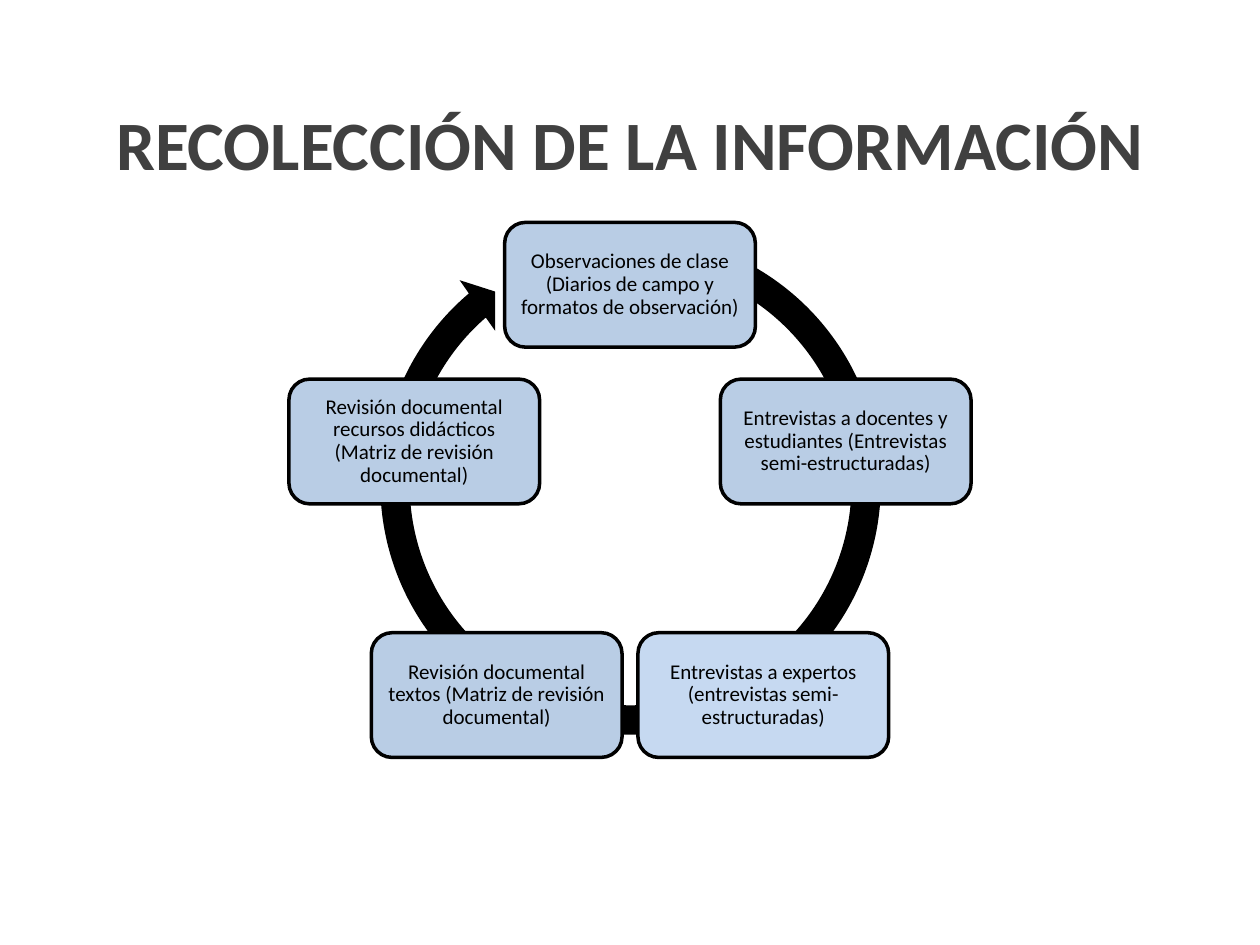
from math import cos, radians, sin

from pptx import Presentation
from pptx.dml.color import RGBColor
from pptx.enum.shapes import MSO_SHAPE
from pptx.enum.text import MSO_ANCHOR, PP_ALIGN
from pptx.util import Inches, Pt

ROUND_RECT = MSO_SHAPE.ROUNDED_RECTANGLE
CIRCULAR_ARROW = MSO_SHAPE.CIRCULAR_ARROW
MIDDLE = MSO_ANCHOR.MIDDLE
CENTER = PP_ALIGN.CENTER

BLACK = RGBColor(0x00, 0x00, 0x00)
DARK_GRAY = RGBColor(0x40, 0x40, 0x40)
BLUE = RGBColor(0xB9, 0xCD, 0xE5)
LIGHT_BLUE = RGBColor(0xC6, 0xD9, 0xF1)

# Cycle layout, in inches
CENTER_X, CENTER_Y, RADIUS = 5.0, 4.06, 1.8
BOX_W, BOX_H = 1.99, 0.99

# Clockwise from the top
STEPS = [
    ("Observaciones de clase (Diarios de campo y formatos de observación)", BLUE),
    ("Entrevistas a docentes y estudiantes (Entrevistas semi-estructuradas)", BLUE),
    ("Entrevistas a expertos (entrevistas semi-estructuradas)", LIGHT_BLUE),
    ("Revisión documental textos (Matriz de revisión documental)", BLUE),
    ("Revisión documental recursos didácticos (Matriz de revisión documental)", BLUE),
]


def write(tf, text, size=12, color=BLACK, bold=False, spacing=1.0, inset=0.05):
    tf.word_wrap = True
    tf.vertical_anchor = MIDDLE
    tf.margin_left = tf.margin_right = Inches(inset)
    tf.margin_top = tf.margin_bottom = Inches(0.05)
    p = tf.paragraphs[0]
    p.alignment = CENTER
    p.line_spacing = spacing
    r = p.add_run()
    r.text = text
    r.font.name = "Calibri"
    r.font.size = Pt(size)
    r.font.bold = bold
    r.font.color.rgb = color


class Deck:
    def __init__(self, prs):
        self.s = prs.slides.add_slide(prs.slide_layouts[6])

    def shape(self, kind, x, y, w, h, fill):
        sp = self.s.shapes.add_shape(kind, Inches(x), Inches(y), Inches(w), Inches(h))
        sp.shadow.inherit = False
        sp.fill.solid()
        sp.fill.fore_color.rgb = fill
        sp.line.fill.background()
        return sp

    def title(self, text, x, y, w, h):
        sp = self.s.shapes.add_textbox(Inches(x), Inches(y), Inches(w), Inches(h))
        write(sp.text_frame, text, size=39.6, color=DARK_GRAY, bold=True, inset=0.1)

    def ring(self, x, y, size):
        sp = self.shape(CIRCULAR_ARROW, x, y, size, size, BLACK)
        # Thickness, head angle, end angle, start angle, head width
        for i, value in enumerate((0.055, 3.307, 137.654, 173.924, 0.058)):
            sp.adjustments[i] = value

    def step(self, text, cx, cy, fill):
        sp = self.shape(ROUND_RECT, cx - BOX_W / 2, cy - BOX_H / 2, BOX_W, BOX_H, fill)
        sp.line.color.rgb = BLACK
        sp.line.width = Pt(2)
        write(sp.text_frame, text, spacing=0.9)


def main():
    prs = Presentation()
    prs.slide_width, prs.slide_height = Inches(10), Inches(7.5)
    deck = Deck(prs)

    # Title
    deck.title("RECOLECCIÓN DE LA INFORMACIÓN", 0.5, 0.51, 9, 1.25)

    # Cycle: arrow behind, steps evenly spaced on a circle
    deck.ring(2.89, 1.73, 4.23)
    for i, (text, fill) in enumerate(STEPS):
        angle = radians(i * 360 / len(STEPS))
        deck.step(text, CENTER_X + RADIUS * sin(angle),
                  CENTER_Y - RADIUS * cos(angle), fill)

    prs.save("out.pptx")


if __name__ == "__main__":
    main()
